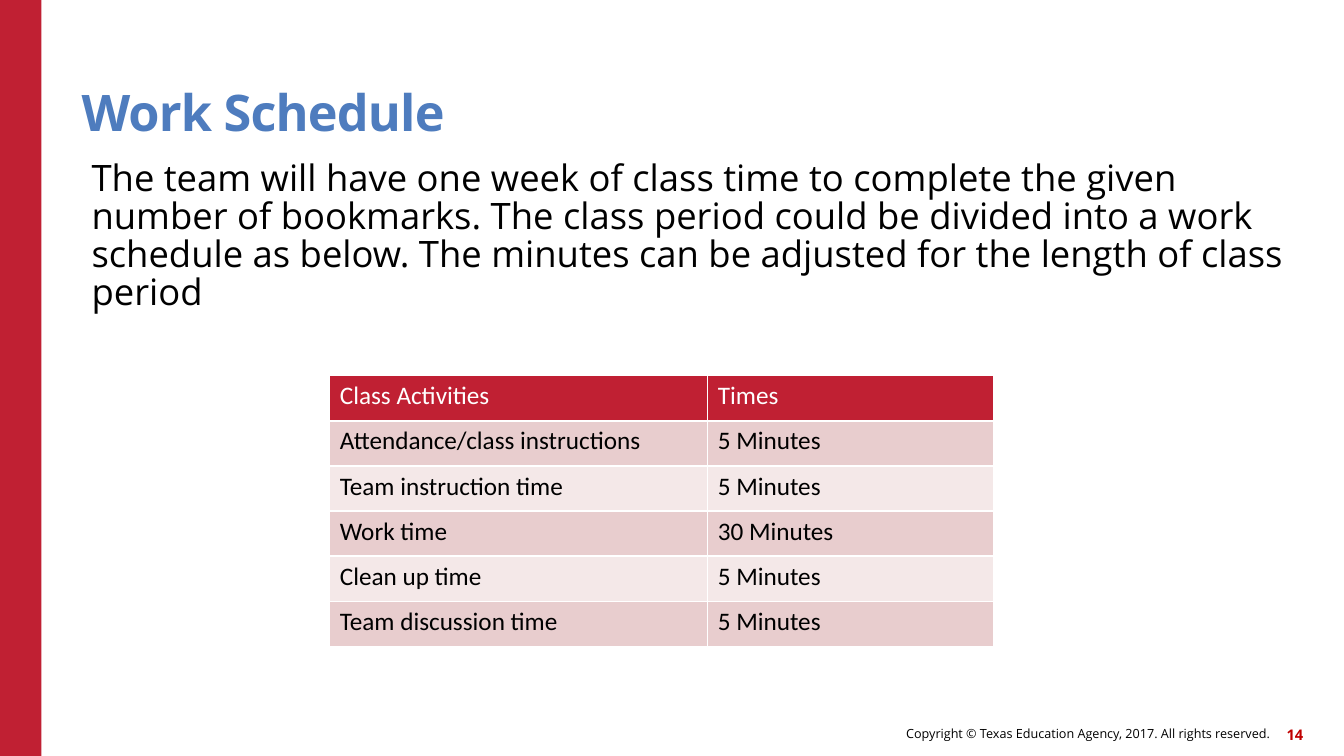
"""Build the Work Schedule slide with its table of class activities and times."""
from lxml import etree
from pptx import Presentation
from pptx import util as u
from pptx.dml.color import RGBColor
from pptx.enum import shapes, text
from pptx.oxml.ns import qn

COLORS = {
    "red": "C02033", "number": "C00000", "title": "4E7CBE",
    "black": "000000", "white": "FFFFFF", "dark": "E8CDCE", "light": "F4E8E8",
}


def rgb(name):
    return RGBColor.from_string(COLORS[name])


def add_text(box, content, size, color, anchor, align, bold=False, inset=(0, 0)):
    tf = s.shapes.add_textbox(*[u.Pt(v) for v in box]).text_frame
    tf.word_wrap = True
    tf.vertical_anchor = anchor
    tf.margin_left = tf.margin_right = u.Pt(inset[0])
    tf.margin_top = tf.margin_bottom = u.Pt(inset[1])
    p = tf.paragraphs[0]
    p.text = content
    p.alignment = align
    p.font.name = "Open Sans"
    p.font.size = u.Pt(size)
    p.font.bold = bold
    p.font.color.rgb = rgb(color)
    return p


prs = Presentation()
prs.slide_width, prs.slide_height = u.Pt(960), u.Pt(540)
s = prs.slides.add_slide(prs.slide_layouts[6])
top, middle, bottom = text.MSO_ANCHOR.TOP, text.MSO_ANCHOR.MIDDLE, text.MSO_ANCHOR.BOTTOM
left, right = text.PP_ALIGN.LEFT, text.PP_ALIGN.RIGHT

sp = s.shapes.add_shape(shapes.MSO_SHAPE.RECTANGLE, 0, 0, u.Pt(29.5), u.Pt(540))
sp.shadow.inherit = False
sp.fill.solid()
sp.fill.fore_color.rgb = rgb("red")
sp.line.fill.background()

add_text((442, 512.6, 465, 23), "Copyright © Texas Education Agency, 2017. All rights reserved.",
         9, "black", middle, right)
add_text((900.7, 513.4, 30.2, 23), "14", 10.5, "number", middle, right, bold=True)

p = add_text((58.3, 32.4, 792, 69.1), "Work Schedule", 36, "title", bottom, left, bold=True)
p.line_spacing = 0.9
p.runs[0].font._element.set("spc", "-60")

p = add_text((58.3, 111.6, 870.5, 373), "The team will have one week of class time to complete "
             "the given number of bookmarks. The class period could be divided into a work schedule "
             "as below. The minutes can be adjusted for the length of class period",
             26, "black", top, left, inset=(7.2, 3.6))
p.line_spacing = 0.87

schedule = [
    ("Class Activities", "Times"),
    ("Attendance/class instructions", "5 Minutes"),
    ("Team instruction time", "5 Minutes"),
    ("Work time", "30 Minutes"),
    ("Clean up time", "5 Minutes"),
    ("Team discussion time", "5 Minutes"),
]
table = s.shapes.add_table(len(schedule), 2, u.Pt(235.6), u.Pt(268.5),
                           u.Pt(474), u.Pt(193.2)).table
for column, width in zip(table.columns, (270, 204)):
    column.width = u.Pt(width)
for i, row in enumerate(schedule):
    table.rows[i].height = u.Pt(32.2)
    fill = "red" if i == 0 else "dark" if i % 2 else "light"
    for j, value in enumerate(row):
        cell = table.cell(i, j)
        tcPr = cell._tc.get_or_add_tcPr()
        for side in ("lnL", "lnR", "lnT", "lnB"):
            ln = etree.SubElement(tcPr, qn(f"a:{side}"), w=str(u.Pt(1)))
            solid = etree.SubElement(ln, qn("a:solidFill"))
            etree.SubElement(solid, qn("a:srgbClr"), val=COLORS["white"])
        cell.fill.solid()
        cell.fill.fore_color.rgb = rgb(fill)
        p = cell.text_frame.paragraphs[0]
        p.text = value
        p.font.name = "Calibri"
        p.font.size = u.Pt(18)
        p.font.bold = False
        p.font.color.rgb = rgb("black" if i else "white")

prs.save("out.pptx")
